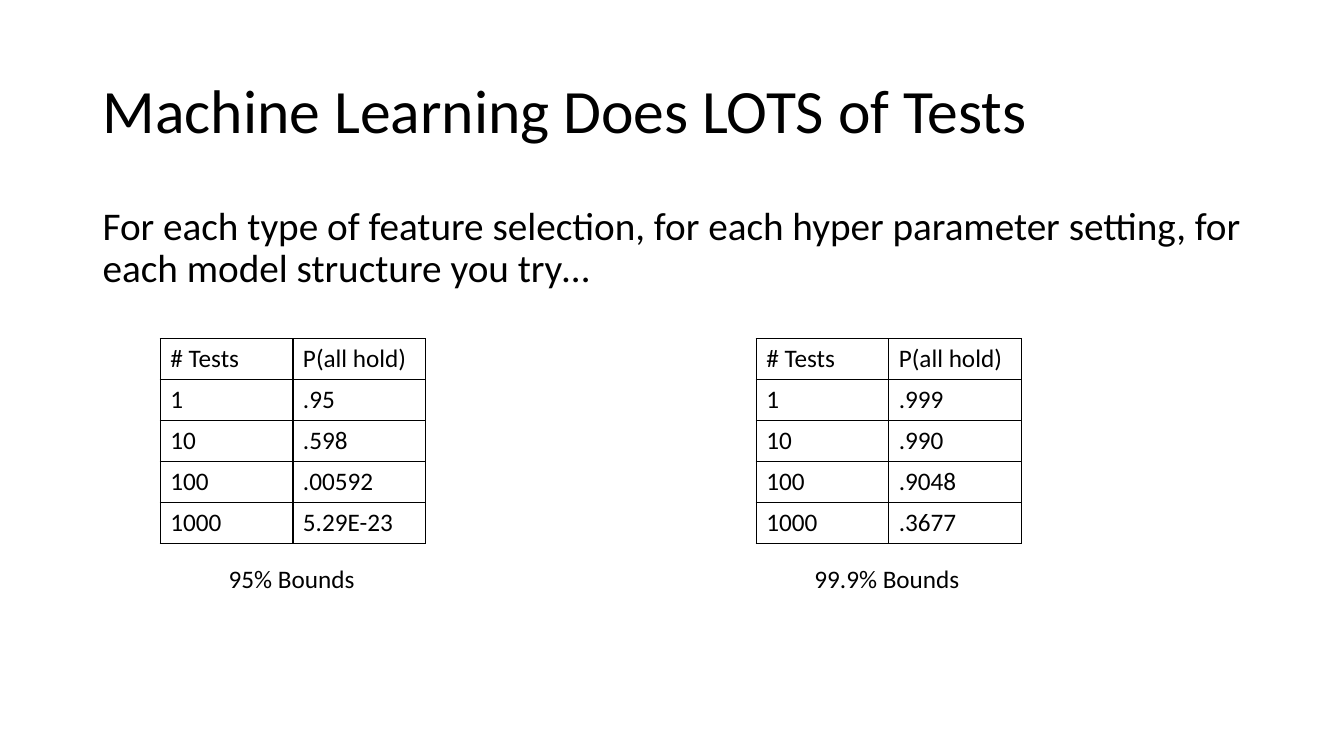
from lxml.etree import SubElement
from pptx import Presentation
from pptx.dml.color import RGBColor
from pptx.enum.text import MSO_ANCHOR, MSO_AUTO_SIZE
from pptx.oxml.ns import qn
from pptx.util import Inches, Pt

BLACK = RGBColor(0x00, 0x00, 0x00)

HEADINGS = ("# Tests", "P(all hold)")
TEST_COUNTS = ("1", "10", "100", "1000")
TABLE_TOP, TABLE_WIDTH, TABLE_HEIGHT = 3.36, 2.63, 2.03
CAPTION_TOP, CAPTION_HEIGHT = 5.54, 0.4
BOUNDS = (
    (1.59, (".95", ".598", ".00592", "5.29E-23"), "95% Bounds", 2.17, 1.46),
    (7.5, (".999", ".990", ".9048", ".3677"), "99.9% Bounds", 7.98, 1.66),
)

TITLE_FRAME = {"word_wrap": True, "vertical_anchor": MSO_ANCHOR.MIDDLE}
BODY_FRAME = {"word_wrap": True}
CAPTION_FRAME = {"word_wrap": False, "auto_size": MSO_AUTO_SIZE.SHAPE_TO_FIT_TEXT}
TITLE_PARAGRAPH = {"line_spacing": 0.9}
BODY_PARAGRAPH = {"line_spacing": 0.9, "space_before": Pt(10)}
PLAIN_TABLE = {"first_row": False, "horz_banding": False}


def apply_format(target, values):
    for name, value in values.items():
        setattr(target, name, value)


class SlideBuilder:
    font_name = "Calibri"
    color = BLACK
    border_width = Pt(1)

    def __init__(self, slide):
        self.slide = slide

    def fill_frame(self, frame, wording, size, paragraph_format):
        paragraph = frame.paragraphs[0]
        apply_format(paragraph, paragraph_format)
        run = paragraph.add_run()
        run.text = wording
        apply_format(run.font, {"name": self.font_name, "size": Pt(size)})
        run.font.color.rgb = self.color

    def text(self, place, wording, size, frame_format, paragraph_format):
        frame = self.slide.shapes.add_textbox(*map(Inches, place)).text_frame
        apply_format(frame, frame_format)
        self.fill_frame(frame, wording, size, paragraph_format)

    def border(self, cell):
        properties = cell._tc.get_or_add_tcPr()
        for side in ("lnL", "lnR", "lnT", "lnB"):
            line = SubElement(properties, qn(f"a:{side}"), w=str(self.border_width))
            fill = SubElement(line, qn("a:solidFill"))
            SubElement(fill, qn("a:srgbClr"), val=str(self.color))

    def table(self, place, rows):
        grid = self.slide.shapes.add_table(
            len(rows), len(rows[0]), *map(Inches, place)
        ).table
        apply_format(grid, PLAIN_TABLE)
        for row_index, row in enumerate(rows):
            for column_index, wording in enumerate(row):
                cell = grid.cell(row_index, column_index)
                self.border(cell)
                cell.fill.background()
                self.fill_frame(cell.text_frame, wording, 18, {})


def main():
    presentation = Presentation()
    apply_format(
        presentation, {"slide_width": Inches(13.33), "slide_height": Inches(7.5)}
    )
    builder = SlideBuilder(presentation.slides.add_slide(presentation.slide_layouts[6]))

    builder.text(
        (0.92, 0.4, 11.5, 1.45),
        "Machine Learning Does LOTS of Tests",
        44, TITLE_FRAME, TITLE_PARAGRAPH,
    )
    builder.text(
        (0.92, 2, 11.5, 4.76),
        "For each type of feature selection, for each hyper parameter setting, "
        "for each model structure you try…",
        28, BODY_FRAME, BODY_PARAGRAPH,
    )
    for table_left, probabilities, caption, caption_left, caption_width in BOUNDS:
        builder.table(
            (table_left, TABLE_TOP, TABLE_WIDTH, TABLE_HEIGHT),
            [HEADINGS, *zip(TEST_COUNTS, probabilities)],
        )
        builder.text(
            (caption_left, CAPTION_TOP, caption_width, CAPTION_HEIGHT),
            caption, 18, CAPTION_FRAME, {},
        )

    presentation.save("out.pptx")


if __name__ == "__main__":
    main()
